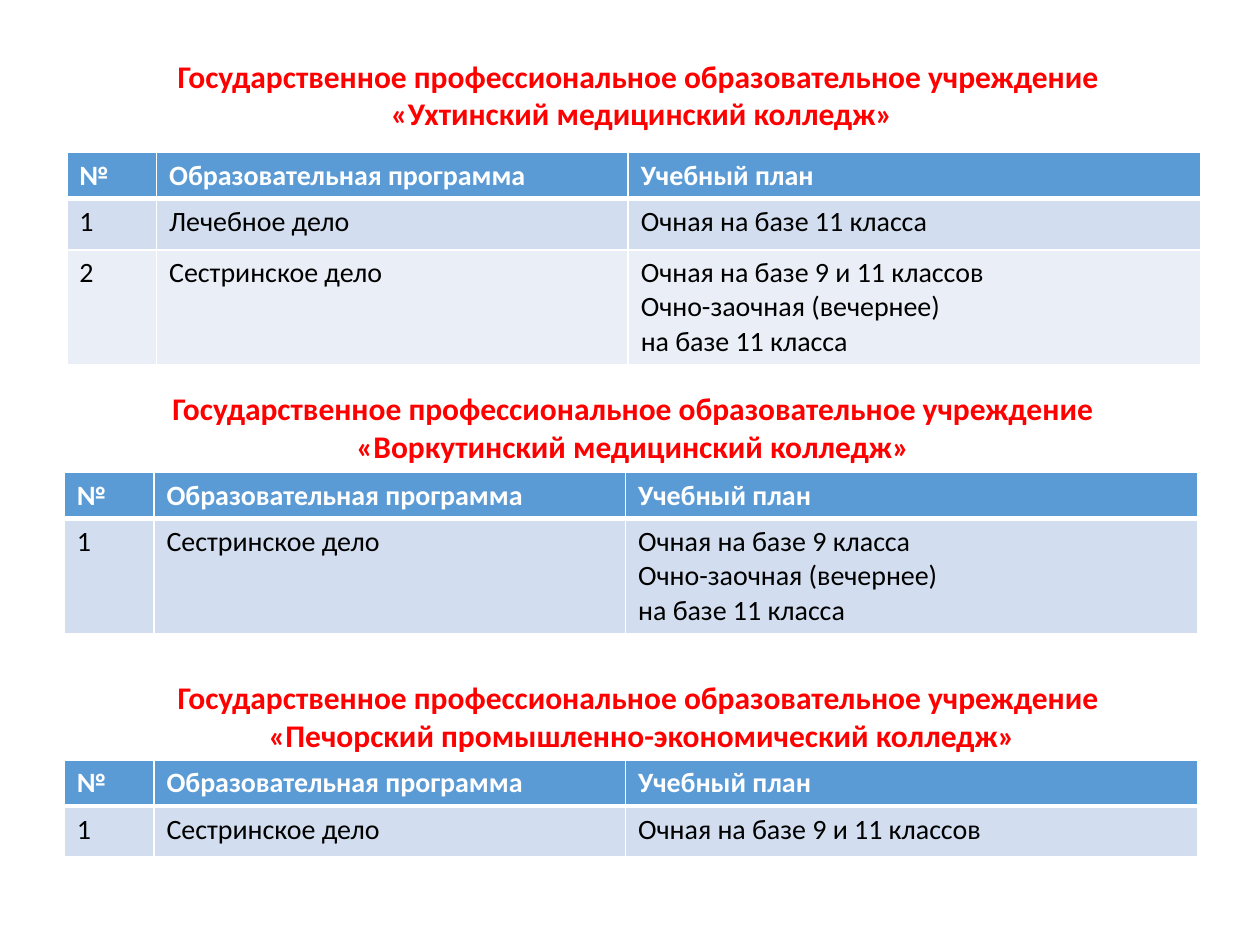
import pptx
import pptx.util
import pptx.dml.color
import pptx.enum.text
import pptx.oxml
import pptx.oxml.ns

Pt = pptx.util.Pt
RGBColor = pptx.dml.color.RGBColor

RED = RGBColor(0xFF, 0x00, 0x00)
WHITE = RGBColor(0xFF, 0xFF, 0xFF)
BLACK = RGBColor(0x00, 0x00, 0x00)
HEADER_BLUE = RGBColor(0x5B, 0x9B, 0xD5)
BAND_DARK = RGBColor(0xD2, 0xDE, 0xEF)
BAND_LIGHT = RGBColor(0xEA, 0xEF, 0xF7)

HEADER = ("№", "Образовательная программа", "Учебный план")
COLUMN_WIDTHS = (51.3, 269.5, 327.2)
HEADER_HEIGHT = 26.4
ROW_HEIGHT = 29.2
LINE_HEIGHT = 19.5
CELL_PADDING = 7.2
INSTITUTION = "Государственное профессиональное образовательное учреждение "

COLLEGES = [
    (INSTITUTION + "\n«Ухтинский медицинский колледж»", 41.8, 28.8, 38.2, 87.1, [
        ("1", "Лечебное дело", "Очная на базе 11 класса"),
        ("2", "Сестринское дело",
         "Очная на базе 9 и 11 классов\nОчно-заочная (вечернее)\nна базе 11 класса"),
    ]),
    (INSTITUTION + "«Воркутинский медицинский колледж»", 36.7, 218.9, 36.7, 270, [
        ("1", "Сестринское дело",
         "Очная на базе 9 класса\nОчно-заочная (вечернее)\nна базе 11 класса"),
    ]),
    (INSTITUTION + "\n«Печорский промышленно-экономический колледж»", 41.8, 383.8, 36.7, 434.2, [
        ("1", "Сестринское дело", "Очная на базе 9 и 11 классов"),
    ]),
]


def write(frame, text, size, color, bold, alignment):
    frame.text = text
    for paragraph in frame.paragraphs:
        paragraph.alignment = alignment
        paragraph.font.name = "Calibri"
        paragraph.font.size = Pt(size)
        paragraph.font.bold = bold
        paragraph.font.color.rgb = color


def add_borders(cell, top, bottom):
    properties = cell._tc.get_or_add_tcPr()
    for side, width in (("L", 1), ("R", 1), ("T", top), ("B", bottom)):
        properties.append(pptx.oxml.parse_xml(
            f'<a:ln{side} {pptx.oxml.ns.nsdecls("a")} w="{Pt(width)}">'
            f'<a:solidFill><a:srgbClr val="{WHITE}"/></a:solidFill></a:ln{side}>'))


presentation = pptx.Presentation()
presentation.slide_width = Pt(720)
presentation.slide_height = Pt(540)
slide = presentation.slides.add_slide(presentation.slide_layouts[6])

for title, title_left, title_top, left, top, programs in COLLEGES:
    heading = slide.shapes.add_textbox(Pt(title_left), Pt(title_top), Pt(650), Pt(50.9)).text_frame
    heading.word_wrap = True
    write(heading, title, 18, RED, True, pptx.enum.text.PP_ALIGN.CENTER)

    heights = [HEADER_HEIGHT] + [
        max(ROW_HEIGHT, LINE_HEIGHT * len(plan.split("\n")) + CELL_PADDING)
        for number, program, plan in programs]
    curriculum = slide.shapes.add_table(
        len(heights), len(HEADER), Pt(left), Pt(top),
        Pt(sum(COLUMN_WIDTHS)), Pt(sum(heights))).table
    for column, width in zip(curriculum.columns, COLUMN_WIDTHS):
        column.width = Pt(width)
    for index, values in enumerate([HEADER] + programs):
        curriculum.rows[index].height = Pt(heights[index])
        is_header = index == 0
        fill = HEADER_BLUE if is_header else BAND_DARK if index % 2 else BAND_LIGHT
        for cell, value in zip(curriculum.rows[index].cells, values):
            add_borders(cell, 3 if index == 1 else 1, 3 if is_header else 1)
            cell.fill.solid()
            cell.fill.fore_color.rgb = fill
            write(cell.text_frame, value, 16, WHITE if is_header else BLACK,
                  is_header, pptx.enum.text.PP_ALIGN.LEFT)

presentation.save("out.pptx")
